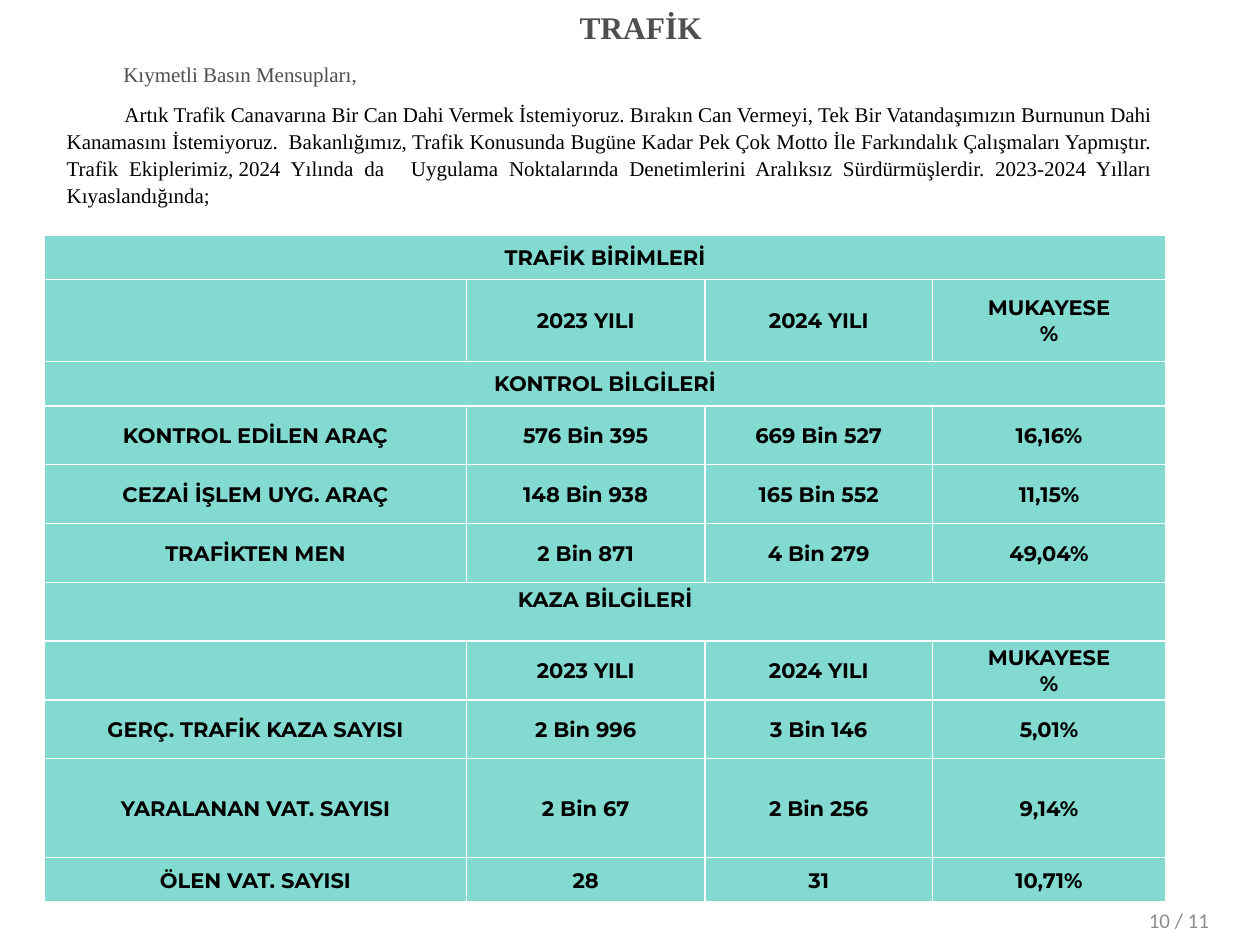
from lxml import etree
from pptx import Presentation
from pptx.dml.color import RGBColor
from pptx.enum.text import MSO_ANCHOR, PP_ALIGN
from pptx.oxml.ns import qn
from pptx.util import Pt

CENTER, JUSTIFY, LEFT = PP_ALIGN.CENTER, PP_ALIGN.JUSTIFY, PP_ALIGN.LEFT
MIDDLE = MSO_ANCHOR.MIDDLE
BLACK = RGBColor(0x00, 0x00, 0x00)
DARK_GRAY = RGBColor(0x4F, 0x4F, 0x4F)
PAGE_GRAY = RGBColor(0x8C, 0x8C, 0x8C)
TURQUOISE = RGBColor(0x82, 0xDA, 0xD0)
WHITE = RGBColor(0xFF, 0xFF, 0xFF)


def style(paragraph, name, size, color, bold, align):
    paragraph.alignment = align
    font = paragraph.font
    font.name, font.size, font.bold = name, Pt(size), bold
    font.color.rgb = color


def add_border(cell, side):
    line = etree.SubElement(cell._tc.get_or_add_tcPr(), qn("a:" + side), w=str(Pt(1)))
    fill = etree.SubElement(line, qn("a:solidFill"))
    etree.SubElement(fill, qn("a:srgbClr"), val=str(WHITE))


prs = Presentation()
prs.slide_width, prs.slide_height = Pt(720), Pt(540)
slide = prs.slides.add_slide(prs.slide_layouts[6])

page_number = slide.shapes.add_textbox(Pt(649.4), Pt(514.8), Pt(70.6), Pt(21.6)).text_frame
page_number.word_wrap = True
page_number.text = "10 / 11"
style(page_number.paragraphs[0], "Calibri", 12, PAGE_GRAY, False, LEFT)

YEARS = ["", "2023 YILI", "2024 YILI", "MUKAYESE\v%"]
rows = [
    (25.5, ["TRAFİK BİRİMLERİ"]),
    (46.8, YEARS),
    (25.5, ["KONTROL BİLGİLERİ"]),
    (33.6, ["KONTROL EDİLEN ARAÇ", "576 Bin 395", "669 Bin 527", "16,16%"]),
    (33.6, ["CEZAİ İŞLEM UYG. ARAÇ", "148 Bin 938", "165 Bin 552", "11,15%"]),
    (33.6, ["TRAFİKTEN MEN", "2 Bin 871", "4 Bin 279", "49,04%"]),
    (33.6, ["KAZA BİLGİLERİ"]),
    (33.6, YEARS),
    (33.6, ["GERÇ. TRAFİK KAZA SAYISI", "2 Bin 996", "3 Bin 146", "5,01%"]),
    (56.6, ["YARALANAN VAT. SAYISI", "2 Bin 67", "2 Bin 256", "9,14%"]),
    (25.5, ["ÖLEN VAT. SAYISI", "28", "31", "10,71%"]),
]
column_widths = [241, 136.4, 130, 133.2]
traffic = slide.shapes.add_table(
    len(rows), len(column_widths), Pt(25.5), Pt(134.2),
    Pt(sum(column_widths)), Pt(sum(height for height, _ in rows)),
).table
traffic.first_row = traffic.horz_banding = False
for column, width in zip(traffic.columns, column_widths):
    column.width = Pt(width)

for r, (height, values) in enumerate(rows):
    traffic.rows[r].height = Pt(height)
    for cell in traffic.rows[r].cells:
        for side in ("lnL", "lnR", "lnT", "lnB"):
            add_border(cell, side)
        cell.fill.solid()
        cell.fill.fore_color.rgb = TURQUOISE
        cell.margin_left = cell.margin_right = cell.margin_top = Pt(0.7)
        cell.margin_bottom = Pt(0)
        cell.vertical_anchor = MIDDLE
    if len(values) == 1:
        traffic.cell(r, 0).merge(traffic.cell(r, len(column_widths) - 1))
    for c, value in enumerate(values):
        cell = traffic.cell(r, c)
        cell.text = value
        style(cell.text_frame.paragraphs[0], "Montserrat", 12, BLACK, True, CENTER)
        if value == "KAZA BİLGİLERİ":
            cell.margin_bottom = Pt(14.6)

statement = [
    ("TRAFİK", 18, DARK_GRAY, True, CENTER, 35.3),
    ("Kıymetli Basın Mensupları,", 12, DARK_GRAY, False, JUSTIFY, 32.4),
    ("Artık Trafik Canavarına Bir Can Dahi Vermek İstemiyoruz. Bırakın Can Vermeyi, "
     "Tek Bir Vatandaşımızın Burnunun Dahi Kanamasını İstemiyoruz.\u00a0 Bakanlığımız, "
     "Trafik Konusunda Bugüne Kadar Pek Çok Motto İle Farkındalık Çalışmaları Yapmıştır. "
     "Trafik Ekiplerimiz,\u00a02024 Yılında da \u00a0 Uygulama Noktalarında Denetimlerini "
     "Aralıksız Sürdürmüşlerdir. 2023-2024 Yılları Kıyaslandığında;",
     12, BLACK, False, JUSTIFY, 33),
]
intro = slide.shapes.add_textbox(Pt(31), Pt(-0.7), Pt(635), Pt(120.2)).text_frame
intro.word_wrap = True
for i, (text, size, color, bold, align, indent) in enumerate(statement):
    paragraph = intro.add_paragraph() if i else intro.paragraphs[0]
    paragraph.text = text
    style(paragraph, "Times New Roman", size, color, bold, align)
    paragraph.line_spacing = 1.07
    paragraph.space_after = Pt(8)
    properties = paragraph._p.get_or_add_pPr()
    properties.set("marL", "0")
    properties.set("indent", str(Pt(indent)))

prs.save("out.pptx")
